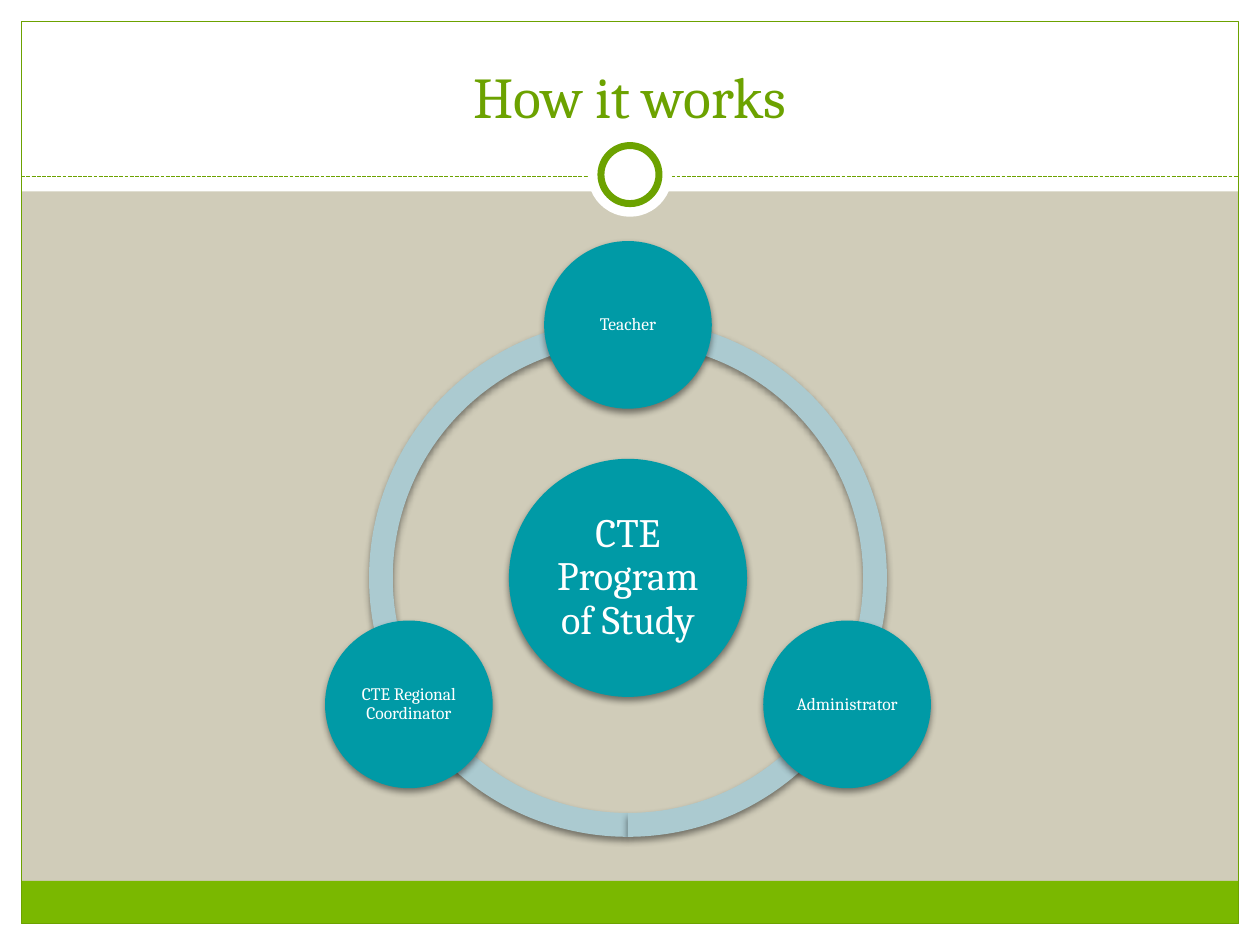
"""Build the 'How it works' slide: a programme hub ringed by three roles."""
from dataclasses import dataclass
from math import cos, radians, sin

from lxml import etree
from pptx import Presentation
from pptx import util as u
from pptx.dml.color import RGBColor
from pptx.enum import dml, shapes, text
from pptx.oxml.ns import qn

COLORS = {
    "sand": "D0CCB9", "white": "FFFFFF", "leaf": "7AB800", "green": "6CA200",
    "teal": "009AA6", "mist": "ABCAD0", "black": "000000",
}
FONT = "Cambria"
WIDTH, HEIGHT = 25.4, 19.05
MARGIN = 0.43
INNER_WIDTH, INNER_HEIGHT = WIDTH - 2 * MARGIN, HEIGHT - 2 * MARGIN
RULE_Y = 3.56
BADGE_X, BADGE_Y = WIDTH / 2, 3.52
WHEEL_X, WHEEL_Y = 12.66, 11.65
RING_SIZE, ORBIT = 10.44, 5.1
OVAL = shapes.MSO_SHAPE.OVAL


@dataclass
class Band:
    left: float
    top: float
    width: float
    height: float
    fill: str | None = "white"
    line: str | None = None


@dataclass
class Disc:
    label: str
    x: float
    y: float
    size: float
    points: float
    inset: float


@dataclass
class Arc:
    start: float
    end: float


def color(name: str) -> RGBColor:
    return RGBColor.from_string(COLORS[name])


def add_shape(slide, kind, band: Band, line_width: float = 0.75):
    shape = slide.shapes.add_shape(
        kind, u.Cm(band.left), u.Cm(band.top), u.Cm(band.width), u.Cm(band.height))
    shape.shadow.inherit = False
    if band.fill:
        shape.fill.solid()
        shape.fill.fore_color.rgb = color(band.fill)
    else:
        shape.fill.background()
    if band.line:
        shape.line.color.rgb = color(band.line)
        shape.line.width = u.Pt(line_width)
    else:
        shape.line.fill.background()
    return shape


def centered(x: float, y: float, size: float, fill: str, line: str | None = None) -> Band:
    return Band(x - size / 2, y - size / 2, size, size, fill, line)


def add_shadow(shape) -> None:
    effects = shape.element.spPr.find(qn("a:effectLst"))
    shadow = etree.SubElement(
        effects, qn("a:outerShdw"), blurRad=str(u.Pt(4)), dist=str(u.Pt(2)),
        dir="5400000", rotWithShape="0")
    tint = etree.SubElement(shadow, qn("a:srgbClr"), val=COLORS["black"])
    etree.SubElement(tint, qn("a:alpha"), val="45000")


def write(shape, words: str, *, points: float, ink: str, anchor=text.MSO_ANCHOR.MIDDLE,
          spacing: float = 1.0, inset: float | None = None) -> None:
    box = shape.text_frame
    box.word_wrap = True
    box.auto_size = text.MSO_AUTO_SIZE.NONE
    box.vertical_anchor = anchor
    if inset is not None:
        box.margin_left = box.margin_right = u.Cm(inset)
        box.margin_top = box.margin_bottom = u.Cm(inset)
    para = box.paragraphs[0]
    para.alignment = text.PP_ALIGN.CENTER
    para.line_spacing = spacing
    span = para.add_run()
    span.text = words
    span.font.name = FONT
    span.font.size = u.Pt(points)
    span.font.color.rgb = color(ink)


def add_frame(slide) -> None:
    bands = [
        Band(0, HEIGHT - MARGIN, WIDTH, MARGIN),
        Band(0, 0, WIDTH, 3.86),
        Band(0, 0, MARGIN, HEIGHT),
        Band(WIDTH - MARGIN, 0, MARGIN, HEIGHT),
        Band(MARGIN, 17.76, INNER_WIDTH, 0.86, "leaf"),
        Band(MARGIN, MARGIN, INNER_WIDTH, INNER_HEIGHT, None, "green"),
    ]
    for band in bands:
        add_shape(slide, shapes.MSO_SHAPE.RECTANGLE, band)
    rule = slide.shapes.add_connector(
        shapes.MSO_CONNECTOR.STRAIGHT, u.Cm(MARGIN), u.Cm(RULE_Y),
        u.Cm(WIDTH - MARGIN), u.Cm(RULE_Y))
    rule.line.color.rgb = color("green")
    rule.line.width = u.Pt(0.75)
    rule.line.dash_style = dml.MSO_LINE.SQUARE_DOT
    etree.SubElement(rule.element.spPr, qn("a:effectLst"))
    add_shape(slide, OVAL, centered(BADGE_X, BADGE_Y, 1.7, "white"))
    add_shape(slide, OVAL, centered(BADGE_X, BADGE_Y, 1.17, "white", "green"), 4)


def add_title(slide, words: str) -> None:
    title = slide.shapes.title
    title.left, title.top = u.Cm(0.85), u.Cm(0.64)
    title.width, title.height = u.Cm(23.7), u.Cm(2.11)
    write(title, words, points=33, ink="green", anchor=text.MSO_ANCHOR.BOTTOM)
    title.element.getparent().append(title.element)


def add_arc(slide, arc: Arc) -> None:
    shape = add_shape(slide, shapes.MSO_SHAPE.BLOCK_ARC,
                      centered(WHEEL_X, WHEEL_Y, RING_SIZE, "mist"))
    shape.adjustments[0] = arc.start * 0.6
    shape.adjustments[1] = arc.end * 0.6
    shape.adjustments[2] = 0.046
    add_shadow(shape)


def add_disc(slide, disc: Disc) -> None:
    shape = add_shape(slide, OVAL, centered(disc.x, disc.y, disc.size, "teal"))
    add_shadow(shape)
    write(shape, disc.label, points=disc.points, ink="white", spacing=0.9, inset=disc.inset)


def role(label: str, angle: float) -> Disc:
    turn = radians(angle)
    return Disc(label, WHEEL_X + ORBIT * cos(turn), WHEEL_Y + ORBIT * sin(turn), 3.38, 10, 0.03)


def main() -> None:
    deck = Presentation()
    deck.slide_width, deck.slide_height = u.Cm(WIDTH), u.Cm(HEIGHT)
    slide = deck.slides.add_slide(deck.slide_layouts[5])
    slide.background.fill.solid()
    slide.background.fill.fore_color.rgb = color("sand")
    add_frame(slide)
    add_title(slide, "How it works")
    for arc in (Arc(90, 162), Arc(18, 90), Arc(162, 18)):
        add_arc(slide, arc)
    add_disc(slide, Disc("CTE Program of Study", WHEEL_X, WHEEL_Y, 4.8, 23, 0.08))
    roles = ("Teacher", "Administrator", "CTE Regional Coordinator")
    for index, label in enumerate(roles):
        add_disc(slide, role(label, 360 / len(roles) * index - 90))
    deck.save("out.pptx")


if __name__ == "__main__":
    main()
